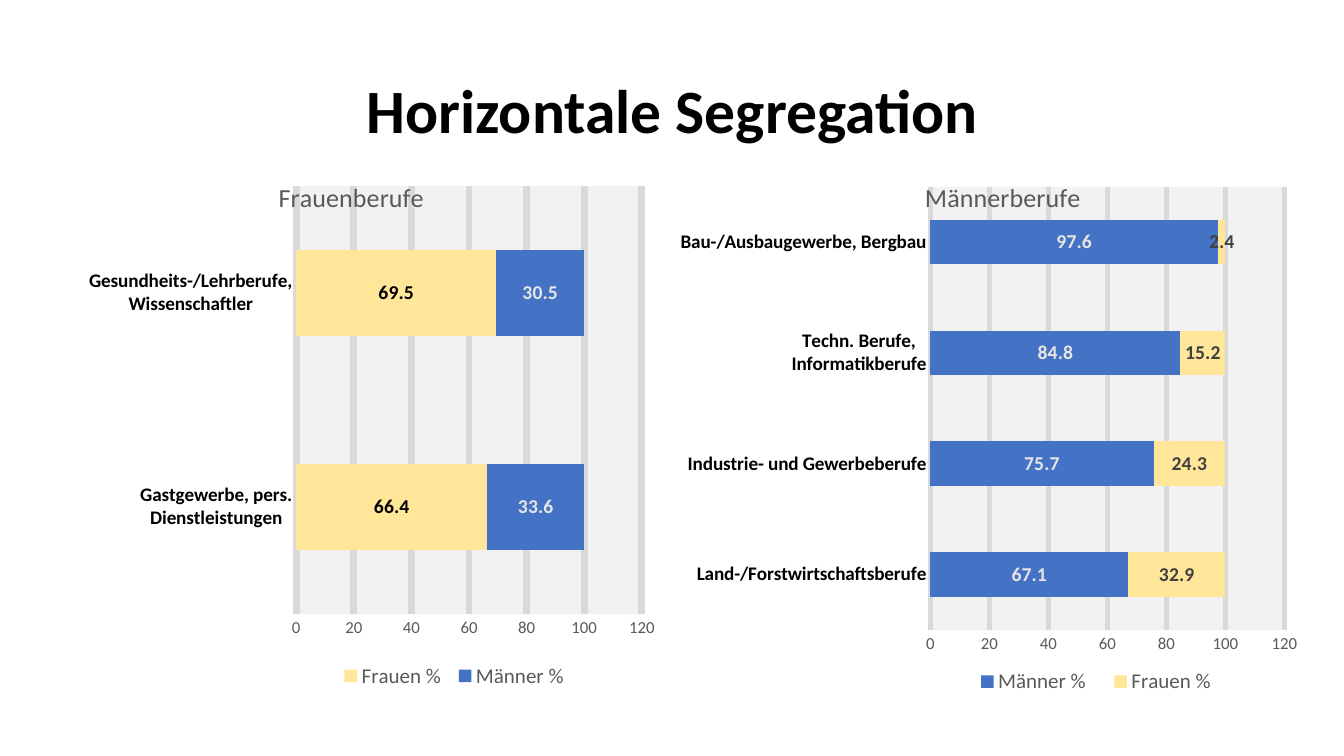
from lxml import etree
from pptx import Presentation
from pptx.chart.data import CategoryChartData
from pptx.dml.color import RGBColor
from pptx.enum.chart import XL_CHART_TYPE, XL_LABEL_POSITION, XL_LEGEND_POSITION, XL_TICK_MARK
from pptx.enum.text import MSO_ANCHOR, PP_ALIGN
from pptx.oxml import parse_xml
from pptx.oxml.ns import nsdecls, qn
from pptx.util import Inches, Pt

BAR_STACKED = XL_CHART_TYPE.BAR_STACKED
NO_TICK = XL_TICK_MARK.NONE
LABEL_CENTER = XL_LABEL_POSITION.CENTER
LEGEND_BOTTOM = XL_LEGEND_POSITION.BOTTOM
MIDDLE, CENTER = MSO_ANCHOR.MIDDLE, PP_ALIGN.CENTER

FONT = "Calibri"
BLACK, GREY, GRID, PLOT = "000000", "595959", "D9D9D9", "F2F2F2"
WOMEN, MEN, PALE, DARK = "FFE699", "4472C4", "E7E6E6", "404040"

TITLE = "Horizontale Segregation"
CHART_TOP, CHART_W, CHART_H = 1.48, 6.29, 5.62

# Series: name, values, fill, label colour. Layouts: fractions of the chart area.
CHARTS = [
    {
        "title": "Frauenberufe", "left": 0.29, "grid": 4.75,
        "cats": ["Gastgewerbe, pers. Dienstleistungen",
                 "Gesundheits-/Lehrberufe, Wissenschaftler"],
        "series": [("Frauen %", [66.4, 69.5], WOMEN, BLACK),
                   ("Männer %", [33.6, 30.5], MEN, PALE)],
        "title_at": (0.386, 0.045),
        "plot_at": (0.421, 0.065, 0.545, 0.756),
        "legend_at": (0.48, 0.9, 0.38, 0.06),
    },
    {
        "title": "Männerberufe", "left": 6.75, "grid": 3.75,
        "cats": ["Land-/Forstwirtschaftsberufe", "Industrie- und Gewerbeberufe",
                 "Techn. Berufe, Informatikberufe", "Bau-/Ausbaugewerbe, Bergbau"],
        "series": [("Männer %", [67.1, 75.7, 84.8, 97.6], MEN, PALE),
                   ("Frauen %", [32.9, 24.3, 15.2, 2.4], WOMEN, DARK)],
        "title_at": (0.378, 0.045),
        "plot_at": (0.394, 0.066, 0.558, 0.783),
        "legend_at": (0.44, 0.91, 0.43, 0.06),
    },
]


def rgb(color):
    return RGBColor.from_string(color)


def style(font, size, color, bold=False):
    font.name, font.size, font.bold = FONT, Pt(size), bold
    font.color.rgb = rgb(color)


def write(tf, text, size, color=BLACK, bold=False, align=None):
    p = tf.paragraphs[0]
    p.alignment = align
    r = p.add_run()
    r.text = text
    style(r.font, size, color, bold)
    return p


def place(element, before, box, inner=False):
    """Give a chart part a manual layout, put ahead of the first tag in before."""
    for old in element.findall(qn("c:layout")):
        element.remove(old)
    layout = parse_xml(f"<c:layout {nsdecls('c')}><c:manualLayout/></c:layout>")
    settings = [("layoutTarget", "inner")] if inner else []
    settings += [("xMode", "edge"), ("yMode", "edge")]
    settings += zip("xywh", box)
    for tag, value in settings:
        etree.SubElement(layout[0], qn(f"c:{tag}")).set("val", str(value))
    next(e for e in element if e.tag in [qn(tag) for tag in before]).addprevious(layout)


def style_axes(chart, grid_width):
    for axis, size, color, bold in ((chart.category_axis, 13.7, BLACK, True),
                                    (chart.value_axis, 12, GREY, False)):
        axis.major_tick_mark = axis.minor_tick_mark = NO_TICK
        axis.format.line.fill.background()
        style(axis.tick_labels.font, size, color, bold)
    chart.category_axis.has_major_gridlines = False
    value_axis = chart.value_axis
    value_axis.minimum_scale, value_axis.maximum_scale = 0, 120
    value_axis.major_unit = 20
    line = value_axis.major_gridlines.format.line
    line.color.rgb = rgb(GRID)
    line.width = Pt(grid_width)


def add_bars(s, spec_):
    data = CategoryChartData()
    data.categories = spec_["cats"]
    for name, values, *_ in spec_["series"]:
        data.add_series(name, values)
    chart = s.shapes.add_chart(BAR_STACKED, Inches(spec_["left"]), Inches(CHART_TOP),
                               Inches(CHART_W), Inches(CHART_H), data).chart
    style(chart.font, 10, BLACK)

    chart.has_title = True
    write(chart.chart_title.text_frame, spec_["title"], 18.6, GREY)
    chart.chart_title.include_in_layout = True
    place(chart.chart_title._element, ["c:overlay"], spec_["title_at"])

    style_axes(chart, spec_["grid"])
    plot = chart.plots[0]
    plot.gap_width, plot.overlap, plot.vary_by_categories = 150, 100, False
    for series, (_, _, fill, label_color) in zip(plot.series, spec_["series"]):
        series.format.fill.solid()
        series.format.fill.fore_color.rgb = rgb(fill)
        labels = series.data_labels
        labels.show_value = True
        labels.position = LABEL_CENTER
        style(labels.font, 14, label_color, True)

    area = chart._chartSpace.chart.plotArea
    place(area, ["c:barChart"], spec_["plot_at"], inner=True)
    area.append(parse_xml(f'<c:spPr {nsdecls("c", "a")}><a:solidFill>'
                          f'<a:srgbClr val="{PLOT}"/></a:solidFill></c:spPr>'))

    chart.has_legend = True
    legend = chart.legend
    legend.position, legend.include_in_layout = LEGEND_BOTTOM, False
    style(legend.font, 15, GREY)
    place(legend._element, ["c:overlay", "c:txPr"], spec_["legend_at"])


prs = Presentation()
prs.slide_width, prs.slide_height = Inches(13.33), Inches(7.5)
s = prs.slides.add_slide(prs.slide_layouts[6])

tf = s.shapes.add_textbox(Inches(0.92), Inches(0.4), Inches(11.5), Inches(1.45)).text_frame
tf.word_wrap, tf.vertical_anchor = True, MIDDLE
write(tf, TITLE, 44, bold=True, align=CENTER).line_spacing = 0.9

for chart_content in CHARTS:
    add_bars(s, chart_content)

prs.save("out.pptx")
